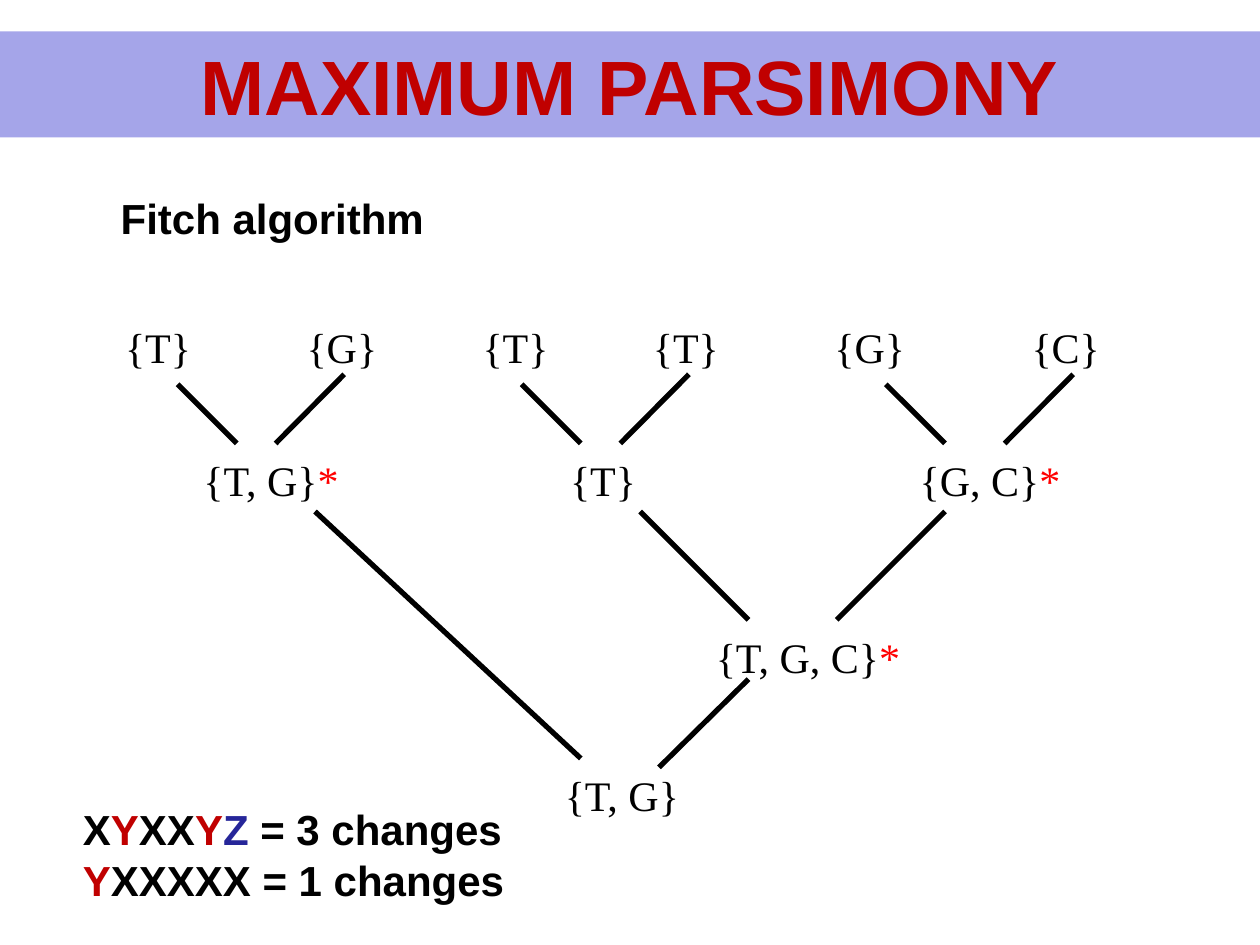
from lxml import etree
from pptx import Presentation
from pptx import util as u
from pptx.dml.color import RGBColor
from pptx.enum import shapes, text
from pptx.oxml.ns import qn

COLORS = {"black": "000000", "red": "FF0000", "dark_red": "C00000",
          "blue": "262699", "band": "A5A5E9"}
SERIF = {"name": "Times New Roman", "size": u.Pt(24)}
SANS = {"name": "Arial", "size": u.Pt(24), "bold": True}
TITLE = {"name": "Arial", "size": u.Pt(44), "bold": True}

ROWS = [
    (180, [(90.3, "T"), (195.4, "G"), (294.6, "T"), (392, "T"), (497, "G"), (609, "C")]),
    (256.3, [(154.9, "T, G*"), (344.6, "T"), (565.7, "G, C*")]),
    (357.1, [(461.7, "T, G, C*")]),
    (436.3, [(355.4, "T, G")]),
]
LEAF_PAIRS = [(101.5, 196.7), (298.1, 393.7), (506.2, 613.3)]
INNER_BRANCHES = [
    (365.8, 292.3, 427.7, 354.2), (180, 292.3, 331.9, 433.4),
    (540, 292.3, 478.1, 354.2), (427.7, 388.1, 376.6, 438.5),
]
HEADING = [[("Fitch algorithm", "black")]]
CHANGES = [
    [("X", "black"), ("Y", "dark_red"), ("XX", "black"), ("Y", "dark_red"),
     ("Z ", "blue"), ("= 3 changes", "black")],
    [("Y", "dark_red"), ("XXXXX = 1 changes", "black")],
]
LABEL_WIDTH, LABEL_HEIGHT = 130, 36.7


def color(name):
    return RGBColor.from_string(COLORS[name])


def write(box, lines, font, align):
    frame = box.text_frame
    frame.word_wrap = True
    for index, line in enumerate(lines):
        para = frame.paragraphs[0] if index == 0 else frame.add_paragraph()
        para.alignment = align
        for words, tint in line:
            span = para.add_run()
            span.text = words
            for key, value in font.items():
                setattr(span.font, key, value)
            span.font.color.rgb = color(tint)


def add_text(page, place, lines, font, align=text.PP_ALIGN.LEFT):
    box = page.shapes.add_textbox(*map(u.Pt, place))
    write(box, lines, font, align)


def add_branch(page, ends):
    branch = page.shapes.add_connector(shapes.MSO_CONNECTOR.STRAIGHT, *map(u.Pt, ends))
    branch.line.color.rgb = color("black")
    branch.line.width = u.Pt(3)
    etree.SubElement(branch._element.spPr, qn("a:effectLst"))


def main():
    deck = Presentation()
    deck.slide_width, deck.slide_height = u.Pt(720), u.Pt(540)
    page = deck.slides.add_slide(deck.slide_layouts[6])

    for top, labels in ROWS:
        for center, bases in labels:
            line = [("{" + bases.rstrip("*") + "}", "black")]
            if bases.endswith("*"):
                line.append(("*", "red"))
            place = (center - LABEL_WIDTH / 2, top, LABEL_WIDTH, LABEL_HEIGHT)
            add_text(page, place, [line], SERIF, text.PP_ALIGN.CENTER)

    for left, right in LEAF_PAIRS:
        add_branch(page, (left, 219.6, left + 33.8, 253.4))
        add_branch(page, (right, 213.9, right - 39.2, 253.4))
    for ends in INNER_BRANCHES:
        add_branch(page, ends)

    add_text(page, (61.9, 106.6, 189.4, LABEL_HEIGHT), HEADING, SANS)
    add_text(page, (40.3, 455.8, 262.8, 65.5), CHANGES, SANS)

    band = page.shapes.add_shape(shapes.MSO_SHAPE.RECTANGLE, *map(u.Pt, (0, 18, 720, 60.5)))
    band.shadow.inherit = False
    band.fill.solid()
    band.fill.fore_color.rgb = color("band")
    band.line.fill.background()
    write(band, [[("MAXIMUM PARSIMONY", "dark_red")]], TITLE, text.PP_ALIGN.CENTER)

    deck.save("out.pptx")


if __name__ == "__main__":
    main()
